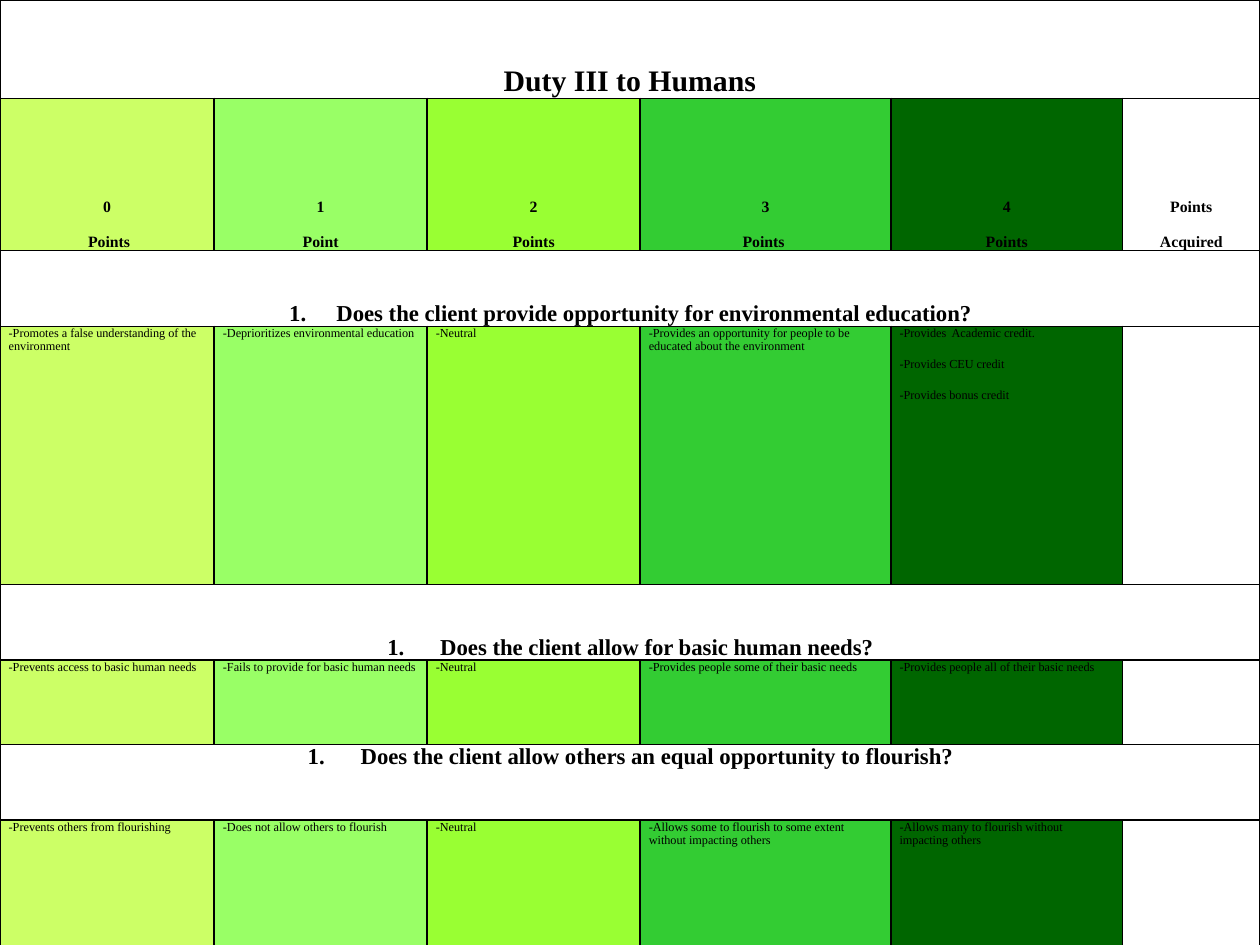
"""Build the rubric slide for the duty to humans."""
from dataclasses import dataclass

from lxml import etree
from pptx import Presentation
from pptx.dml.color import RGBColor
from pptx.enum import text as t
from pptx.oxml import ns
from pptx.util import Pt

FONT = "Times New Roman"
INK = "000000"
SCORE_FILLS = ["CCFF66", "99FF66", "99FF33", "33CC33", "006600", None]
COLUMN_WIDTHS = [122.4, 121.7, 121.7, 143.3, 132.4, 78.5]
CENTER, LEFT = t.PP_ALIGN.CENTER, t.PP_ALIGN.LEFT
TOP, BOTTOM = t.MSO_ANCHOR.TOP, t.MSO_ANCHOR.BOTTOM


@dataclass
class Style:
    size: float
    bold: bool = True
    align: t.PP_ALIGN = CENTER
    anchor: t.MSO_ANCHOR = BOTTOM
    before: float = 0
    after: float = 0
    numbered: bool = False


@dataclass
class Row:
    height: float
    style: Style
    cells: list[str]


TITLE = Style(17, before=12, after=3)
SCORE = Style(9, after=10)
QUESTION = Style(13, numbered=True)
TOP_QUESTION = Style(13, anchor=TOP, numbered=True)
CRITERION = Style(7, bold=False, align=LEFT, anchor=TOP, after=10)

ROWS = [
    Row(56.2, TITLE, ["Duty III to Humans"]),
    Row(87.1, SCORE, ["0\n Points", "1\nPoint", "2\nPoints", "3\nPoints ", "4\nPoints",
                      "Points\nAcquired"]),
    Row(43.2, QUESTION, ["Does the client provide opportunity for environmental education?"]),
    Row(147.6, CRITERION, [
        "-Promotes a false understanding of the environment",
        "-Deprioritizes environmental education",
        "-Neutral",
        "-Provides an opportunity for people to be educated about the environment",
        "-Provides  Academic credit.\n-Provides CEU credit\n-Provides bonus credit",
        ""]),
    Row(43.2, QUESTION, [" Does the client allow for basic human needs?"]),
    Row(48.2, CRITERION, [
        "-Prevents access to basic human needs",
        "-Fails to provide for basic human needs",
        "-Neutral",
        "-Provides people some of their basic needs",
        "-Provides people all of their basic needs",
        ""]),
    Row(43.2, TOP_QUESTION, [" Does the client allow others an equal opportunity to flourish?"]),
    Row(72.7, CRITERION, [
        "-Prevents others from flourishing",
        "-Does not allow others to flourish",
        "-Neutral",
        "-Allows some to flourish to some extent without impacting others",
        "-Allows many to flourish without impacting others",
        ""]),
]


def paint(fill, color: str | None) -> None:
    if color is None:
        fill.background()
    else:
        fill.solid()
        fill.fore_color.rgb = RGBColor.from_string(color)


def add_borders(cell) -> None:
    properties = cell._tc.get_or_add_tcPr()
    for side in ("a:lnL", "a:lnR", "a:lnT", "a:lnB"):
        border = etree.SubElement(properties, ns.qn(side), w=str(Pt(1)))
        solid = etree.SubElement(border, ns.qn("a:solidFill"))
        etree.SubElement(solid, ns.qn("a:srgbClr"), val=INK)


def number(paragraph) -> None:
    properties = paragraph._p.get_or_add_pPr()
    properties.set("marL", str(Pt(27)))
    properties.set("indent", str(-Pt(27)))
    etree.SubElement(properties, ns.qn("a:buFont"), typeface="+mj-lt")
    etree.SubElement(properties, ns.qn("a:buAutoNum"), type="arabicPeriod")


def write(cell, content: str, style: Style) -> None:
    layout = {"margin_left": Pt(5), "margin_right": Pt(5), "margin_top": 0,
              "margin_bottom": 0, "vertical_anchor": style.anchor}
    for name, value in layout.items():
        setattr(cell, name, value)
    cell.text_frame.text = content
    spacing = {"alignment": style.align, "space_before": Pt(style.before),
               "space_after": Pt(style.after)}
    lettering = {"name": FONT, "size": Pt(style.size), "bold": style.bold}
    for paragraph in cell.text_frame.paragraphs:
        for name, value in spacing.items():
            setattr(paragraph, name, value)
        if style.numbered:
            number(paragraph)
        for part in [paragraph, *paragraph.runs]:
            for name, value in lettering.items():
                setattr(part.font, name, value)
            paint(part.font.fill, INK)


def draw_row(table, index: int, row: Row) -> None:
    table.rows[index].height = Pt(row.height)
    cells = list(table.rows[index].cells)
    spans = len(row.cells) == 1
    for cell, color in zip(cells, SCORE_FILLS):
        add_borders(cell)
        paint(cell.fill, None if spans else color)
    if spans:
        cells[0].merge(cells[-1])
    for cell, content in zip(cells, row.cells):
        write(cell, content, row.style)


def main() -> None:
    deck = Presentation()
    deck.slide_width, deck.slide_height = Pt(720), Pt(540)
    slide = deck.slides.add_slide(deck.slide_layouts[6])
    rubric = slide.shapes.add_table(len(ROWS), len(COLUMN_WIDTHS), 0, 0, Pt(720), Pt(540)).table
    for flag in ("first_row", "horz_banding"):
        setattr(rubric, flag, False)
    for column, width in zip(rubric.columns, COLUMN_WIDTHS):
        column.width = Pt(width)
    for index, row in enumerate(ROWS):
        draw_row(rubric, index, row)
    deck.save("out.pptx")


if __name__ == "__main__":
    main()
